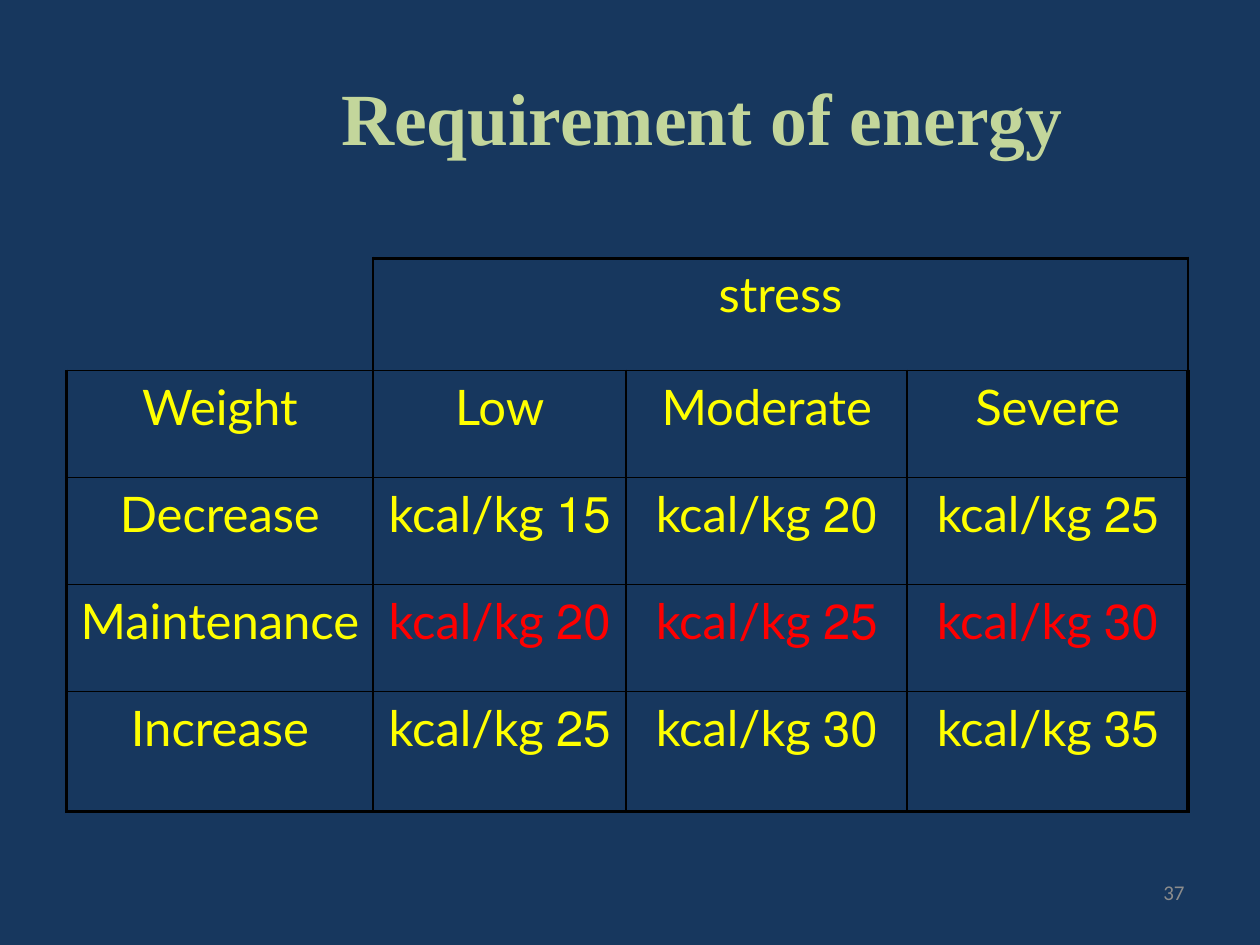
import pptx
import pptx.util
import pptx.dml.color
import pptx.enum.text
import pptx.oxml
import pptx.oxml.ns
from pptx.util import Inches

HUES = {"back": "17375E", "title": "C3D69B", "text": "FFFF00",
        "mark": "FF0000", "line": "000000", "page": "8C8C8C"}
ALIGN = pptx.enum.text.PP_ALIGN
MIDDLE = pptx.enum.text.MSO_ANCHOR.MIDDLE
WIDTHS = [2.43, 2.01, 2.23, 2.23]
HEIGHTS = [0.89, 0.85, 0.85, 0.85, 0.95]
ROWS = [
    ["", "stress", "", ""],
    ["Weight", "Low", "Moderate", "Severe"],
    ["Decrease", "15 kcal/kg", "20 kcal/kg", "25 kcal/kg"],
    ["Maintenance", "20 kcal/kg", "25 kcal/kg", "30 kcal/kg"],
    ["Increase", "25 kcal/kg", "30 kcal/kg", "35 kcal/kg"],
]


def rgb(hue):
    return pptx.dml.color.RGBColor.from_string(HUES[hue])


class Deck:
    def __init__(self, slide):
        self.slide = slide
        fill = slide.background.fill
        fill.solid()
        fill.fore_color.rgb = rgb("back")

    def style(self, para, face, size, hue, align, bold=False):
        para.alignment = align
        font = para.font
        font.name, font.size, font.bold = face, pptx.util.Pt(size), bold
        font.color.rgb = rgb(hue)

    def text(self, words, area, *look):
        box = self.slide.shapes.add_textbox(*map(Inches, area))
        frame = box.text_frame
        frame.word_wrap = True
        frame.vertical_anchor = MIDDLE
        para = frame.paragraphs[0]
        para.text = words
        self.style(para, *look)

    def border(self, cell, sides):
        props = cell._tc.get_or_add_tcPr()
        for spot, (side, width) in enumerate(sides.items()):
            paint = (f'<a:solidFill><a:srgbClr val="{HUES["line"]}"/></a:solidFill>'
                     if width else "<a:noFill/>")
            line = pptx.oxml.parse_xml(
                f'<a:ln{side} {pptx.oxml.ns.nsdecls("a")} '
                f'w="{pptx.util.Pt(width)}">{paint}</a:ln{side}>')
            props.insert(spot, line)

    def table(self, rows, left, top):
        grid = self.slide.shapes.add_table(
            len(rows), len(WIDTHS), Inches(left), Inches(top),
            Inches(sum(WIDTHS)), Inches(sum(HEIGHTS))).table
        grid.first_row = grid.horz_banding = False
        for col, width in zip(grid.columns, WIDTHS):
            col.width = Inches(width)
        for row, height in zip(grid.rows, HEIGHTS):
            row.height = Inches(height)
        grid.cell(0, 1).merge(grid.cell(0, 3))
        end, edge = len(rows) - 1, len(WIDTHS) - 1
        for r, row in enumerate(rows):
            for c, words in enumerate(row):
                cell = grid.cell(r, c)
                cell.fill.background()
                blank = r == 0 and c == 0
                self.border(cell, {
                    "L": 0 if blank else 2.25 if c == 0 else 1,
                    "R": 2.25 if c == edge else 1,
                    "T": 0 if blank else 2.25 if r == 0 else 1,
                    "B": 2.25 if r == end else 1,
                })
                if words:
                    para = cell.text_frame.paragraphs[0]
                    para.text = words
                    para._p.get_or_add_pPr().set("rtl", "1")
                    hue = "mark" if r == 3 and c else "text"
                    self.style(para, "Lato", 28, hue, ALIGN.CENTER)


def main():
    show = pptx.Presentation()
    show.slide_width, show.slide_height = Inches(10), Inches(7.5)
    deck = Deck(show.slides.add_slide(show.slide_layouts[6]))
    deck.text("Requirement of energy", (1.64, 0.3, 7.86, 1.25),
              "Times New Roman", 42, "title", ALIGN.CENTER, True)
    deck.table(ROWS, 0.53, 2.05)
    deck.text("37", (7.17, 6.83, 2.33, 0.5),
              "Calibri", 12, "page", ALIGN.RIGHT)
    show.save("out.pptx")


if __name__ == "__main__":
    main()
